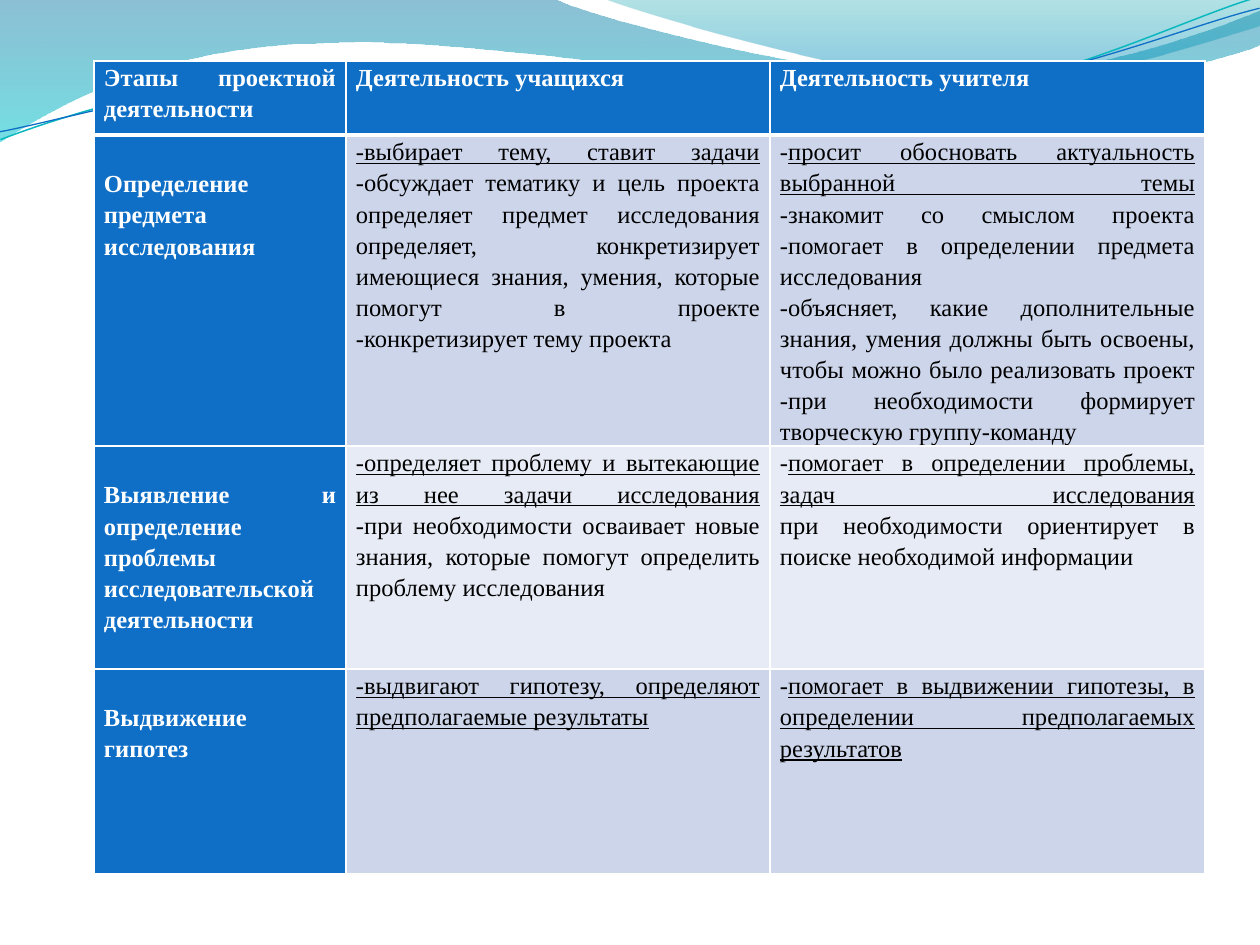
from copy import deepcopy
from dataclasses import dataclass

from pptx import Presentation
from pptx.dml.color import RGBColor as Rgb
from pptx.enum.text import PP_ALIGN as Align
from pptx.oxml.ns import qn
from pptx.oxml.xmlchemy import OxmlElement as Element
from pptx.util import Pt

EMU_PER_PX = 914400 / 126
SLIDE_BOX = (0, 0, 1260, 945)
TABLE_BOX = (94, 61, 1111, 840)


@dataclass(frozen=True)
class Theme:
    """Colours, font and sizes of the slide."""
    font: str = "Times New Roman"
    size: float = 14
    spacing: float = 1.15
    accent: str = "0F6FC6"
    light: str = "FFFFFF"
    dark: str = "000000"
    bands: tuple = ("CCD5EA", "E7EBF5")
    border: float = 1
    header_border: float = 3
    wave_back: tuple = ((0, "0074A1", 45), (1, "00C6CF", 55))
    wave_front: tuple = ((0, "00A1A9", 30), (0.8, "008BBF", 45))
    lines: tuple = (("0AB8BF", 0.85), ("0F6FC6", 0.75))


THEME = Theme()

BACK_WAVE = [
    (0, 0), (554, -1), (600, 21, 837, 79, 955, 79),
    (1075, 79, 1207, 33, 1260, 11), (1261, 45),
    (1239, 55, 1096, 96, 940, 95), (784, 95, 481, 35, 324, 43),
    (163, 45, 58, 105, -1, 142), (0, 0),
]
FRONT_WAVE = [
    (604, -1), (641, 14, 859, 78, 969, 82),
    (1079, 87, 1211, 40, 1260, 26), (1260, 0), (604, -1),
]
WAVE_LINES = [
    [(-2, 110), (58, 90, 199, 52, 350, 53),
     (499, 53, 745, 118, 896, 114), (1049, 109, 1184, 45, 1260, 27)],
    [(-2, 102), (58, 94, 208, 57, 358, 58),
     (509, 59, 750, 112, 902, 108), (1052, 104, 1188, 52, 1262, 38)],
]
LINE_ROTATION = 357.3

COLUMNS = (252, 424, 435)
ROWS = (74, 100, 223, 205)
SIDE_MARGIN = 10
STAGE_MARGIN = 32

HEADERS = ("Этапы проектной деятельности", "Деятельность учащихся", "Деятельность учителя")
STAGES = [
    ("Определение предмета исследования",
     [("-выбирает тему, ставит задачи\n", True),
      ("-обсуждает тематику и цель проекта\n"
       "определяет предмет исследования определяет, конкретизирует имеющиеся "
       "знания, умения, которые помогут в проекте\n"
       "-конкретизирует тему проекта ", False)],
     [("-", False), ("просит обосновать актуальность выбранной темы\n", True),
      ("-знакомит со смыслом проекта\n"
       "-помогает в определении предмета исследования\n"
       "-объясняет, какие дополнительные знания, умения должны быть освоены, "
       "чтобы можно было реализовать проект\n"
       "-при необходимости формирует творческую группу-команду ", False)]),
    ("Выявление и определение проблемы исследовательской деятельности",
     [("-определяет проблему и вытекающие из нее задачи исследования\n", True),
      ("-при необходимости осваивает новые знания, которые помогут "
       "определить проблему исследования", False)],
     [("-", False), ("помогает в определении проблемы, задач исследования\n", True),
      ("при необходимости ориентирует в поиске необходимой информации", False)]),
    ("Выдвижение гипотез",
     [("-выдвигают гипотезу, определяют предполагаемые результаты", True)],
     [("-", False),
      ("помогает в выдвижении гипотезы, в определении предполагаемых результатов", True)]),
]


def px(length):
    """Turn px into EMU."""
    return round(length * EMU_PER_PX)


def set_format(target, values):
    """Set each named attribute of the target."""
    for name, value in values.items():
        setattr(target, name, value)


def add_outline(slide, box, segments, close):
    """Add a freeform of lines and cubic curves placed from the corner of the box."""
    points = [(px(box[0] + x), px(box[1] + y)) for segment in segments
              for x, y in zip(segment[::2], segment[1::2])]
    builder = slide.shapes.build_freeform(*points[0], scale=1.0)
    builder.add_line_segments(points[1:], close=close)
    shape = builder.convert_to_shape()
    shape.shadow.inherit = False
    nodes = iter(list(shape._element.spPr.iter(qn("a:lnTo"))))
    for segment in segments[1:]:
        node = next(nodes)
        if len(segment) == 6:
            curve = Element("a:cubicBezTo")
            node.addprevious(curve)
            for corner in (node, next(nodes), next(nodes)):
                curve.append(corner[0])
                corner.getparent().remove(corner)
    return shape


def add_wave(slide, box, segments, stops):
    """Add a translucent wave shaded from top to bottom."""
    shape = add_outline(slide, box, segments, True)
    shape.line.fill.background()
    shape.fill.gradient()
    shape.fill.gradient_angle = 270
    nodes = shape._element.spPr.iter(qn("a:gs"))
    for stop, node, (position, color, opacity) in zip(shape.fill.gradient_stops, nodes, stops):
        stop.position = position
        stop.color.rgb = Rgb.from_string(color)
        for effect in list(node[0]):
            node[0].remove(effect)
        alpha = Element("a:alpha")
        alpha.set("val", str(opacity * 1000))
        node[0].append(alpha)


def add_waves(slide, box):
    """Add the waves and thin curves at the top of the box."""
    add_wave(slide, box, BACK_WAVE, THEME.wave_back)
    add_wave(slide, box, FRONT_WAVE, THEME.wave_front)
    for segments, (color, width) in zip(WAVE_LINES, THEME.lines):
        shape = add_outline(slide, box, segments, False)
        shape.rotation = LINE_ROTATION
        shape.fill.background()
        shape.line.color.rgb = Rgb.from_string(color)
        shape.line.width = Pt(width)


def write_runs(paragraph, runs, color, bold):
    """Write runs of text and underline, with breaks in the same format."""
    set_format(paragraph, {"alignment": Align.JUSTIFY, "line_spacing": THEME.spacing})
    for text, underline in runs:
        for index, line in enumerate(text.split("\n")):
            if index:
                paragraph.add_line_break()
                paragraph._p[-1].append(deepcopy(run._r.rPr))
            if line:
                run = paragraph.add_run()
                run.text = line
                set_format(run.font, {"name": THEME.font, "size": Pt(THEME.size),
                                      "bold": bold, "underline": underline})
                run.font.color.rgb = Rgb.from_string(color)


def add_borders(cell, widths):
    """Add light borders to a cell, widths given by side."""
    properties = cell._tc.get_or_add_tcPr()
    for side, width in widths.items():
        line = Element(f"a:ln{side}")
        line.set("w", str(Pt(width)))
        fill, color = Element("a:solidFill"), Element("a:srgbClr")
        color.set("val", THEME.light)
        fill.append(color)
        line.append(fill)
        properties.append(line)


def add_stage_table(slide, box):
    """Add the table of project stages in the box."""
    frame = slide.shapes.add_table(len(ROWS), len(COLUMNS), *map(px, box))
    table = frame.table
    for column, width in zip(table.columns, COLUMNS):
        column.width = px(width)
    for row, height in zip(table.rows, ROWS):
        row.height = px(height)
    frame.height = px(box[3])
    contents = [[[(text, False)] for text in HEADERS]]
    contents += [[[(stage, False)], *duties] for stage, *duties in STAGES]
    for i, row in enumerate(contents):
        for j, runs in enumerate(row):
            cell = table.cell(i, j)
            heading = i == 0 or j == 0
            set_format(cell, {
                "margin_left": px(SIDE_MARGIN), "margin_right": px(SIDE_MARGIN),
                "margin_top": px(STAGE_MARGIN if i and j == 0 else 0), "margin_bottom": 0})
            add_borders(cell, {
                "L": THEME.border, "R": THEME.border,
                "T": THEME.header_border if i == 1 else THEME.border,
                "B": THEME.header_border if i == 0 else THEME.border})
            cell.fill.solid()
            cell.fill.fore_color.rgb = Rgb.from_string(
                THEME.accent if heading else THEME.bands[(i - 1) % 2])
            write_runs(cell.text_frame.paragraphs[0], runs,
                       THEME.light if heading else THEME.dark, heading)


def main():
    """Build and save the slide."""
    presentation = Presentation()
    set_format(presentation, {"slide_width": px(SLIDE_BOX[2]), "slide_height": px(SLIDE_BOX[3])})
    slide = presentation.slides.add_slide(presentation.slide_layouts[6])
    add_waves(slide, SLIDE_BOX)
    add_stage_table(slide, TABLE_BOX)
    presentation.save("out.pptx")


if __name__ == "__main__":
    main()
